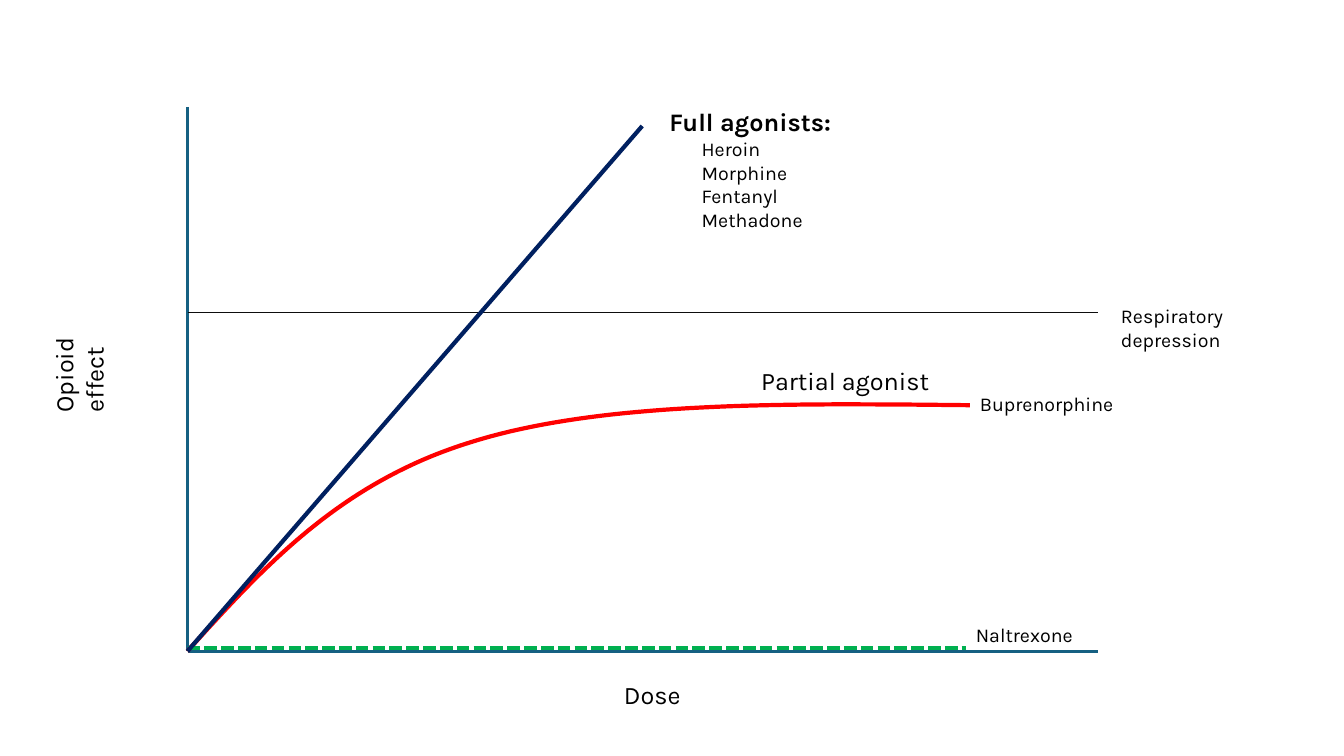
from pptx import Presentation, util as u
from pptx.dml.color import RGBColor
from pptx.enum import dml, shapes, text
from pptx.oxml.ns import qn
from lxml import etree

BLACK = RGBColor(0x00, 0x00, 0x00)
NEAR_BLACK = RGBColor(0x0D, 0x0D, 0x0D)
TEAL = RGBColor(0x15, 0x60, 0x82)
RED = RGBColor(0xFF, 0x00, 0x00)
GREEN = RGBColor(0x00, 0xB0, 0x50)
NAVY = RGBColor(0x00, 0x20, 0x60)

ORIGIN_X, ORIGIN_Y = 1.86, 6.46
AXIS_TOP, AXIS_RIGHT = 1.06, 10.89
CURVE = [
    [(ORIGIN_X, ORIGIN_Y), (2.61, 5.63), (3.37, 4.79), (4.66, 4.39)],
    [(4.66, 4.39), (5.95, 3.98), (7.79, 4.0), (9.62, 4.02)],
]


class DoseChart:
    """Draw labelled lines and curves on one slide in a shared style."""

    def __init__(self, slide, font="Karla"):
        self.s = slide
        self.font = font

    def line(self, start, end, color, width, dash=None, parent=None):
        ends = [u.Inches(v) for v in (*start, *end)]
        tree = (parent or self.s).shapes
        c = tree.add_connector(shapes.MSO_CONNECTOR.STRAIGHT, *ends)
        etree.SubElement(c._element.spPr, qn("a:effectLst"))
        self.stroke(c, color, width)
        if dash:
            c.line.dash_style = dash

    def stroke(self, sp, color, width):
        sp.line.color.rgb = color
        sp.line.width = u.Pt(width)

    def curve(self, segments, color, width, steps=40):
        points = [segments[0][0]]
        for a, b, c, d in segments:
            for i in range(1, steps + 1):
                t = i / steps
                weights = ((1 - t) ** 3, 3 * t * (1 - t) ** 2, 3 * t * t * (1 - t), t ** 3)
                points.append(tuple(sum(w * p[k] for w, p in zip(weights, (a, b, c, d)))
                                    for k in (0, 1)))
        points = [(u.Inches(x), u.Inches(y)) for x, y in points]
        fb = self.s.shapes.build_freeform(*points[0])
        fb.add_line_segments(points[1:], close=False)
        sp = fb.convert_to_shape()
        sp.shadow.inherit = False
        sp.fill.background()
        self.stroke(sp, color, width)

    def label(self, box, heading, size, bold=False, items=(), vertical=False):
        sp = self.s.shapes.add_textbox(*[u.Inches(v) for v in box])
        tf = sp.text_frame
        tf.word_wrap = True
        tf.auto_size = text.MSO_AUTO_SIZE.SHAPE_TO_FIT_TEXT
        if vertical:
            tf._txBody.bodyPr.set("vert", "vert270")
        self.fill_paragraph(tf.paragraphs[0], heading, size, bold)
        for item in items:
            p = tf.add_paragraph()
            p._p.get_or_add_pPr().set("marL", str(u.Inches(0.32)))
            self.fill_paragraph(p, item, 14)

    def fill_paragraph(self, p, words, size, bold=False):
        p.text = words
        p.font.name = self.font
        p.font.size = u.Pt(size)
        p.font.bold = bold
        p.font.color.rgb = BLACK


def main():
    prs = Presentation()
    prs.slide_width, prs.slide_height = u.Inches(13.33), u.Inches(7.5)
    s = prs.slides.add_slide(prs.slide_layouts[6])
    chart = DoseChart(s)
    origin = (ORIGIN_X, ORIGIN_Y)

    axes = s.shapes.add_group_shape()
    chart.line((ORIGIN_X, AXIS_TOP), origin, TEAL, 2.25, parent=axes)
    chart.line((AXIS_RIGHT, ORIGIN_Y), origin, TEAL, 2.25, parent=axes)
    chart.line((ORIGIN_X, 3.1), (AXIS_RIGHT, 3.1), NEAR_BLACK, 1)
    chart.label((11.02, 2.97, 1.54, 0.57), "Respiratory depression", 14)
    chart.label((0.43, 2.56, 0.5, 1.63), "Opioid effect", 18, vertical=True)
    chart.label((6.09, 6.69, 1.33, 0.4), "Dose", 18)

    chart.curve(CURVE, RED, 3)
    chart.line((ORIGIN_X, 6.43), (9.58, 6.43), GREEN, 3, dml.MSO_LINE.SQUARE_DOT)
    chart.label((9.62, 3.84, 1.54, 0.34), "Buprenorphine", 14)
    chart.label((9.58, 6.13, 1.54, 0.34), "Naltrexone", 14)
    chart.line(origin, (6.37, 1.25), NAVY, 3)
    chart.label((6.54, 1.01, 1.88, 1.35), "Full agonists:", 18, bold=True,
                items=("Heroin", "Morphine", "Fentanyl", "Methadone"))
    chart.label((7.45, 3.58, 2.18, 0.4), "Partial agonist", 18)

    prs.save("out.pptx")


if __name__ == "__main__":
    main()
